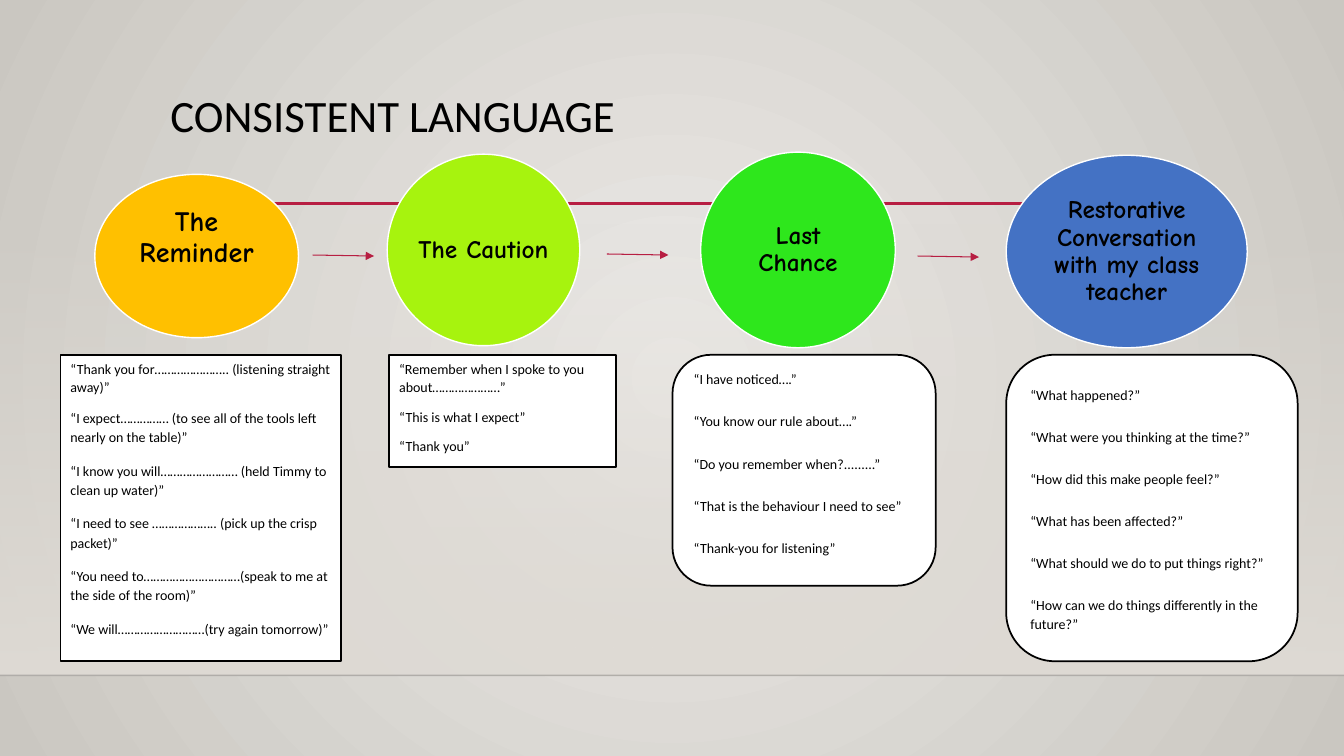
from dataclasses import dataclass
from typing import Any

import pptx
import pptx.dml.color
import pptx.enum.shapes
import pptx.enum.text
import pptx.oxml
import pptx.oxml.ns
import pptx.util

PX = 9144  # EMU in one px, 100 px to the inch
WIDE, HIGH = 1333, 750
COLORS = {
    "black": "000000", "white": "FFFFFF", "rule": "000001", "red": "B71E42",
    "glow": "ECEAE7", "edge": "CAC7C1", "band": "DFDBD5",
    "amber": "FFC000", "lime": "A7F30E", "green": "2EE71C", "blue": "4472C4",
}
KIND = pptx.enum.shapes.MSO_SHAPE
ANCHOR = pptx.enum.text.MSO_ANCHOR
ALIGN = pptx.enum.text.PP_ALIGN
Pt = pptx.util.Pt
Box = tuple[int, int, int, int]

TIGHT = {"line_spacing": 1.07, "space_after": Pt(8)}
LOOSE = {"line_spacing": 1.15, "space_after": Pt(10)}
SPREAD = {"line_spacing": 1.15, "space_after": Pt(16.25)}
CENTRED = {"line_spacing": 0.9, "alignment": ALIGN.CENTER}


@dataclass
class Stage:
    text: str
    box: Box
    color: str
    size: int = 18
    side: int = 3
    foot: int = 3


@dataclass
class Note:
    box: Box
    lines: list[str]
    first: dict[str, Any]
    rest: dict[str, Any]
    kind: Any = KIND.RECTANGLE
    anchor: Any = ANCHOR.TOP
    top: int = 5
    foot: int = 5


@dataclass
class Line:
    start: tuple[int, int]
    end: tuple[int, int]
    color: str
    width: float
    arrow: bool = False
    alpha: int = 100


STAGES = [
    Stage("The Reminder", (94, 173, 202, 162), "amber", size=20, foot=39),
    Stage("The Caution", (384, 153, 191, 190), "lime", side=0),
    Stage("Last Chance", (695, 151, 193, 194), "green", side=10),
    Stage("Restorative Conversation with my class teacher",
          (998, 154, 239, 191), "blue"),
]
NOTES = [
    Note((60, 352, 278, 304), [
        "“Thank you for………………….. (listening straight away)”",
        "“I expect…………… (to see all of the tools left nearly on the table)”",
        "“I know you will…………………… (held Timmy to clean up water)”",
        "“I need to see ……………….. (pick up the crisp packet)”",
        "“You need to…………………………(speak to me at the side of the room)”",
        "“We will………………………(try again tomorrow)”",
    ], TIGHT, LOOSE),
    Note((386, 352, 225, 111), [
        "“Remember when I spoke to you about…………………”",
        "“This is what I expect”",
        "“Thank you”",
    ], TIGHT, TIGHT),
    Note((667, 352, 261, 229), [
        "“I have noticed….”",
        "“You know our rule about….”",
        "“Do you remember when?.........”",
        "“That is the behaviour I need to see”",
        "“Thank-you for listening”",
    ], SPREAD, SPREAD, KIND.ROUNDED_RECTANGLE, ANCHOR.MIDDLE, top=0, foot=16),
    Note((998, 352, 289, 304), [
        "“What happened?”",
        "“What were you thinking at the time?”",
        "“How did this make people feel?”",
        "“What has been affected?”",
        "“What should we do to put things right?”",
        "“How can we do things differently in the future?”",
    ], SPREAD, SPREAD, KIND.ROUNDED_RECTANGLE, ANCHOR.MIDDLE),
]
RULES = [
    Line((0, 670), (WIDE, 670), "rule", 1, alpha=20),
    Line((159, 202), (1210, 202), "red", 2.5),
]
ARROWS = [
    Line((x, y), (x + 61, y + 1), "red", 0.75, arrow=True)
    for x, y in [(310, 253), (602, 252), (910, 254)]
]


def rgb(name: str) -> pptx.dml.color.RGBColor:
    return pptx.dml.color.RGBColor.from_string(COLORS[name])


def assign(target: Any, values: dict[str, Any]) -> None:
    for name, value in values.items():
        setattr(target, name, value)


def node(tag: str, inner: str = "", **attrs: Any) -> Any:
    """Make one DrawingML element."""
    pairs = "".join(f' {key}="{value}"' for key, value in attrs.items())
    space = pptx.oxml.ns.nsdecls("a")
    return pptx.oxml.parse_xml(f"<a:{tag} {space}{pairs}>{inner}</a:{tag}>")


def blend(root: Any, start: str, end: str, alpha: int, shade: Any) -> None:
    """Give the gradient under root two stops and a shading rule."""
    grad = root.find(".//" + pptx.oxml.ns.qn("a:gradFill"))
    for child in list(grad):
        grad.remove(child)
    grad.append(node("gsLst", (
        f'<a:gs pos="0"><a:srgbClr val="{COLORS[start]}">'
        f'<a:alpha val="{alpha * 1000}"/></a:srgbClr></a:gs>'
        f'<a:gs pos="100000"><a:srgbClr val="{COLORS[end]}"/></a:gs>')))
    grad.append(shade)


def add_form(slide: Any, kind: Any, box: Box) -> Any:
    shape = slide.shapes.add_shape(kind, *(v * PX for v in box))
    shape.shadow.inherit = False
    return shape


def paint(shape: Any, fill: str, edge: str, width: float) -> None:
    shape.fill.solid()
    shape.fill.fore_color.rgb = rgb(fill)
    shape.line.color.rgb = rgb(edge)
    shape.line.width = Pt(width)


def style(para: Any, layout: dict[str, Any], **font: Any) -> None:
    assign(para, layout)
    assign(para.font, font)
    para.font.color.rgb = rgb("black")


def set_frame(frame: Any, anchor: Any, side: int, top: int, foot: int) -> None:
    assign(frame, {
        "word_wrap": True, "vertical_anchor": anchor,
        "auto_size": pptx.enum.text.MSO_AUTO_SIZE.NONE,
        "margin_left": side * PX, "margin_right": side * PX,
        "margin_top": top * PX, "margin_bottom": foot * PX,
    })


def add_title(slide: Any) -> None:
    title = slide.shapes.title
    sides = zip(("left", "top", "width", "height"), (159, 88, 1050, 115))
    assign(title, {name: v * PX for name, v in sides})
    title.text_frame.text = "CONSISTENT LANGUAGE"
    set_frame(title.text_frame, ANCHOR.TOP, 10, 5, 5)
    style(title.text_frame.paragraphs[0],
          {"line_spacing": 0.9, "alignment": ALIGN.LEFT},
          name="Calibri", size=Pt(32))


def add_line(slide: Any, line: Line) -> None:
    ends = (v * PX for v in line.start + line.end)
    conn = slide.shapes.add_connector(
        pptx.enum.shapes.MSO_CONNECTOR.STRAIGHT, *ends)
    conn.line.color.rgb = rgb(line.color)
    conn.line.width = Pt(line.width)
    props = conn.element.spPr
    if line.alpha < 100:
        hue = props.find(".//" + pptx.oxml.ns.qn("a:srgbClr"))
        hue.append(node("alpha", val=line.alpha * 1000))
    if line.arrow:
        props.find(pptx.oxml.ns.qn("a:ln")).append(
            node("tailEnd", type="triangle"))
    props.append(node("effectLst"))


def add_stage(slide: Any, stage: Stage) -> None:
    disc = add_form(slide, KIND.OVAL, stage.box)
    paint(disc, stage.color, "white", 1)
    set_frame(disc.text_frame, ANCHOR.MIDDLE, stage.side, 3, stage.foot)
    disc.text_frame.text = stage.text
    style(disc.text_frame.paragraphs[0], CENTRED,
          name="Comic Neue", size=Pt(stage.size), bold=True)


def add_note(slide: Any, note: Note) -> None:
    card = add_form(slide, note.kind, note.box)
    paint(card, "white", "black", 1.25)
    set_frame(card.text_frame, note.anchor, 10, note.top, note.foot)
    card.text_frame.text = "\n".join(note.lines)
    for i, para in enumerate(card.text_frame.paragraphs):
        layout = note.rest if i else note.first
        style(para, layout | {"alignment": ALIGN.LEFT},
              name="Calibri", size=Pt(10))


def main() -> None:
    deck = pptx.Presentation()
    assign(deck, {"slide_width": WIDE * PX, "slide_height": HIGH * PX})
    slide = deck.slides.add_slide(deck.slide_layouts[5])
    slide.background.fill.gradient()
    blend(slide.element, "glow", "edge", 100, node(
        "path", '<a:fillToRect l="50000" t="50000" r="50000" b="50000"/>',
        path="circle"))
    add_title(slide)
    band = add_form(slide, KIND.RECTANGLE, (0, 221, WIDE, 449))
    band.fill.gradient()
    blend(band.element, "band", "band", 0, node("lin", ang=5400000, scaled=0))
    band.line.fill.background()
    for draw, items in [(add_line, RULES), (add_stage, STAGES),
                        (add_note, NOTES), (add_line, ARROWS)]:
        for item in items:
            draw(slide, item)
    deck.save("out.pptx")


if __name__ == "__main__":
    main()
